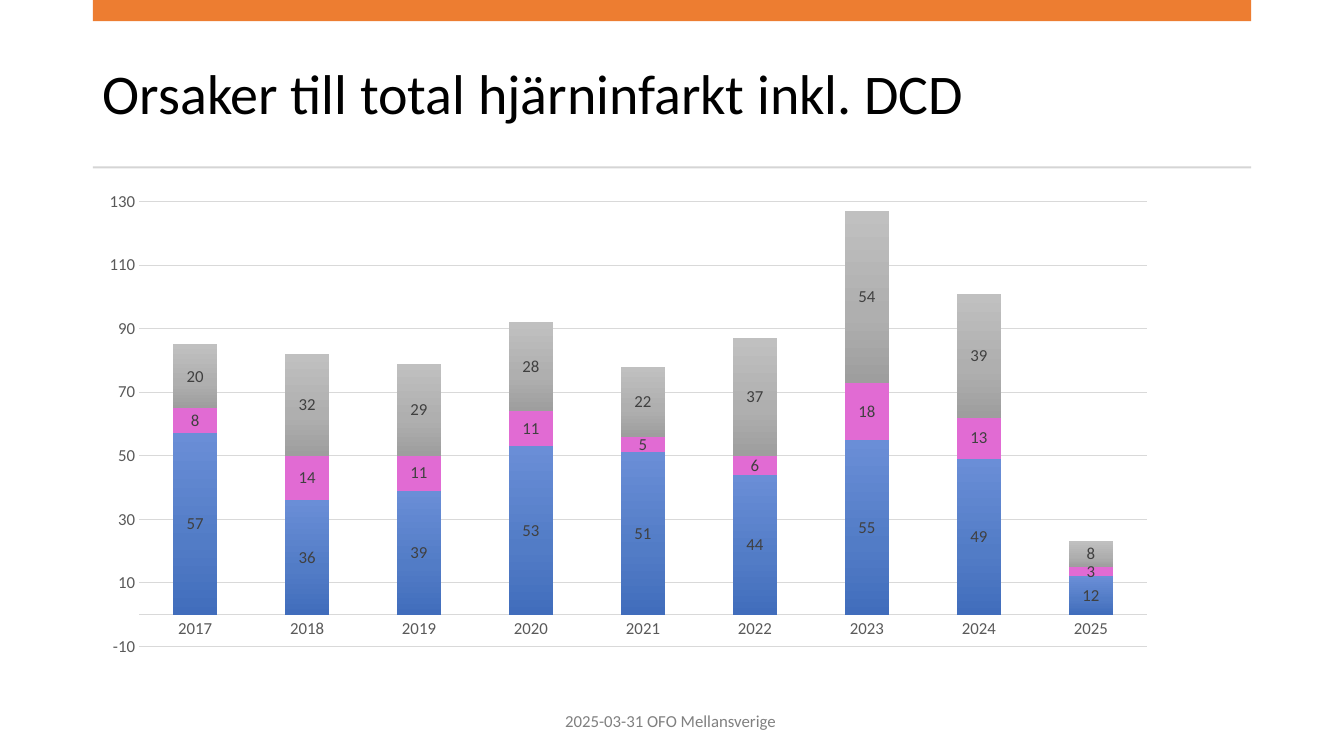
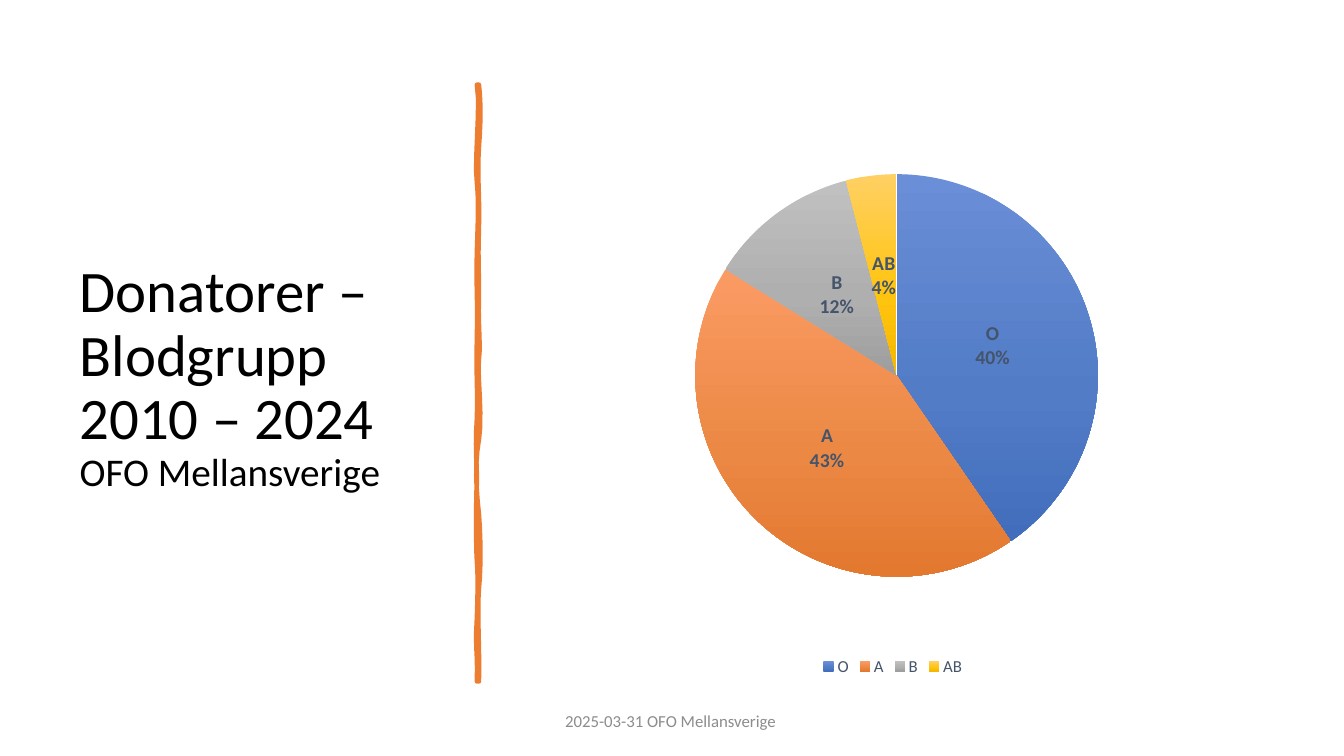
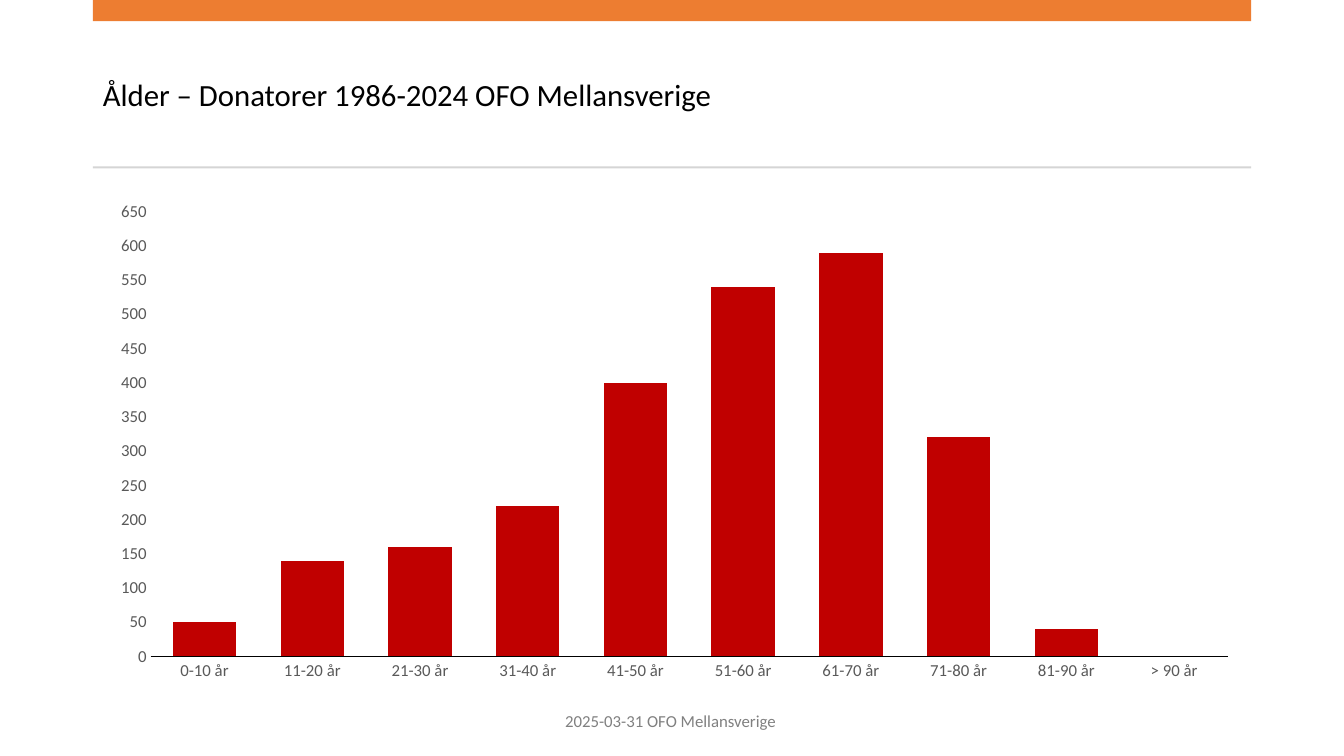
from copy import deepcopy
from dataclasses import dataclass

from lxml import etree
from pptx import Presentation
from pptx.chart.data import CategoryChartData
from pptx.dml.color import RGBColor
from pptx.enum.chart import XL_CHART_TYPE, XL_LABEL_POSITION, XL_LEGEND_POSITION, XL_TICK_MARK
from pptx.enum.shapes import MSO_SHAPE
from pptx.enum.text import MSO_ANCHOR, MSO_AUTO_SIZE, PP_ALIGN
from pptx.oxml.ns import qn
from pptx.util import Inches, Pt

RECTANGLE = MSO_SHAPE.RECTANGLE
STACKED = XL_CHART_TYPE.COLUMN_STACKED
CLUSTERED = XL_CHART_TYPE.COLUMN_CLUSTERED
PIE = XL_CHART_TYPE.PIE
LABEL_CENTER = XL_LABEL_POSITION.CENTER
LEGEND_BOTTOM = XL_LEGEND_POSITION.BOTTOM
NO_TICK = XL_TICK_MARK.NONE
MIDDLE = MSO_ANCHOR.MIDDLE
NO_AUTOSIZE = MSO_AUTO_SIZE.NONE
LEFT = PP_ALIGN.LEFT
CENTER = PP_ALIGN.CENTER

FONT = "Calibri"
BLACK = "000000"
ORANGE = "ED7D31"
RULE_GRAY = "D5D5D5"
GRID_GRAY = "D9D9D9"
AXIS_GRAY = "595959"
LABEL_GRAY = "404040"
FOOTER_GRAY = "808080"
FOOTER_LIGHT = "8C8C8C"
SLATE = "44546A"
PINK = "E16BD3"
RED = "C00000"
BLUE_FADE = ("6A8ED7", "527CC6", "416DBC")
ORANGE_FADE = ("FB9B64", "EB8844", "E3782F")
GRAY_FADE = ("C0C0C0", "AFAFAF", "9E9E9E")
YELLOW_FADE = ("FFD063", "FFC410", "F5B800")
FADE_POSITIONS = (0, 0.6, 1)

FOOTER_TEXT = "2025-03-31 OFO Mellansverige "

STROKE_TOP = 0.84
STROKE_RIGHT = (
    (4.77, 1.02, 4.77, 1.19, 1.46), (4.73, 1.73, 4.76, 1.95, 2.26),
    (4.74, 2.57, 4.75, 2.62, 2.94), (4.74, 3.25, 4.77, 3.42, 3.56),
    (4.73, 3.70, 4.79, 4.14, 4.36), (4.71, 4.57, 4.72, 4.84, 5.10),
    (4.77, 5.36, 4.77, 5.64, 5.84), (4.73, 6.03, 4.76, 6.50, 6.76),
)
STROKE_LEFT = (
    (4.74, 6.46, 4.71, 6.44, 6.13), (4.74, 5.83, 4.74, 5.70, 5.57),
    (4.72, 5.44, 4.72, 4.95, 4.77), (4.73, 4.59, 4.71, 4.45, 4.15),
    (4.74, 3.86, 4.72, 3.73, 3.35), (4.74, 2.98, 4.72, 2.81, 2.50),
    (4.74, 2.18, 4.75, 2.00, 1.81), (4.70, 1.63, 4.77, 1.04, 0.84),
)


@dataclass
class Box:
    left: float
    top: float
    width: float
    height: float

    def inner(self, top, height):
        return Box(self.left, self.top + top, self.width, height)

    def lengths(self):
        return [Inches(value) for value in (self.left, self.top, self.width, self.height)]


HEADER = Box(0.92, 0, 11.49, 1.67)
COLUMN_CHART = Box(0.92, 1.9, 11.49, 4.96)
SIDE_TITLE = Box(0.69, 0.7, 3.74, 6.11)
PIE_CHART = Box(5.08, 0.7, 7.55, 6.05)
FOOTER = Box(4.42, 6.95, 4.5, 0.4)


def color(value):
    return RGBColor.from_string(value)


def style_font(font, size, value, bold=False):
    font.name = FONT
    font.size = Pt(size)
    font.bold = bold
    font.color.rgb = color(value)


def style_line(line, value, width):
    line.color.rgb = color(value)
    line.width = Pt(width)


def paint(fill, value):
    if isinstance(value, str):
        fill.solid()
        fill.fore_color.rgb = color(value)
        return
    fill.gradient()
    fill.gradient_angle = 270
    first = fill.gradient_stops[0]._gs
    first.addnext(deepcopy(first))
    for stop, shade, position in zip(fill.gradient_stops, value, FADE_POSITIONS):
        stop.color.rgb = color(shade)
        stop.position = position


def add_bar(slide, box, value):
    bar = slide.shapes.add_shape(RECTANGLE, *box.lengths())
    bar.shadow.inherit = False
    paint(bar.fill, value)
    bar.line.fill.background()


def add_title(slide, box, text, sizes):
    title = slide.shapes.title
    title.left, title.top, title.width, title.height = box.lengths()
    frame = title.text_frame
    frame.auto_size = NO_AUTOSIZE
    frame.vertical_anchor = MIDDLE
    paragraph = frame.paragraphs[0]
    paragraph.text = text
    paragraph.alignment = LEFT
    paragraph.line_spacing = 0.9
    for run, size in zip(paragraph.runs, sizes):
        style_font(run.font, size, BLACK)


def add_header(slide, box, text, size):
    add_title(slide, box.inner(0.37, 1.18), text, [size])
    add_bar(slide, box.inner(0, 0.21), ORANGE)
    add_bar(slide, box.inner(1.65, 0.02), RULE_GRAY)


def add_footer(slide, box, value):
    frame = slide.shapes.add_textbox(*box.lengths()).text_frame
    frame.word_wrap = True
    frame.vertical_anchor = MIDDLE
    paragraph = frame.paragraphs[0]
    paragraph.text = FOOTER_TEXT
    paragraph.alignment = CENTER
    paragraph.space_after = Pt(6)
    style_font(paragraph.runs[0].font, 12, value)


def curve_points(edge, start_y, edge_x, steps=6):
    points = []
    for x1, y1, x2, y2, end_y in edge:
        for step in range(1, steps + 1):
            t = step / steps
            weights = ((1 - t) ** 3, 3 * t * (1 - t) ** 2, 3 * t * t * (1 - t), t ** 3)
            x = sum(w * v for w, v in zip(weights, (edge_x, x1, x2, edge_x)))
            y = sum(w * v for w, v in zip(weights, (start_y, y1, y2, end_y)))
            points.append((Inches(x), Inches(y)))
        start_y = end_y
    return points


def add_brush_stroke(slide):
    right_x, left_x = 4.75, 4.73
    bottom = STROKE_RIGHT[-1][-1]
    points = curve_points(STROKE_RIGHT, STROKE_TOP, right_x)
    points.append((Inches(left_x), Inches(bottom)))
    points += curve_points(STROKE_LEFT, bottom, left_x)
    builder = slide.shapes.build_freeform(Inches(right_x), Inches(STROKE_TOP))
    builder.add_line_segments(points, close=True)
    stroke = builder.convert_to_shape()
    stroke.shadow.inherit = False
    paint(stroke.fill, ORANGE)
    style_line(stroke.line, ORANGE, 3.25)
    etree.SubElement(stroke.line._get_or_add_ln(), qn("a:round"))


def set_plot_layout(chart, shares):
    plot_area = chart._chartSpace.chart.plotArea
    for layout in plot_area.findall(qn("c:layout")):
        plot_area.remove(layout)
    layout = etree.Element(qn("c:layout"))
    plot_area.insert(0, layout)
    manual = etree.SubElement(layout, qn("c:manualLayout"))
    settings = [("layoutTarget", "inner"), ("xMode", "edge"), ("yMode", "edge")]
    settings += zip("xywh", shares)
    for name, value in settings:
        etree.SubElement(manual, qn("c:" + name)).set("val", str(value))


def add_chart(slide, box, kind, categories, value_rows, shares):
    data = CategoryChartData()
    data.categories = categories
    for number, values in enumerate(value_rows, 1):
        data.add_series(f"Series {number}", values)
    chart = slide.shapes.add_chart(kind, *box.lengths(), data).chart
    chart.has_title = False
    chart.has_legend = False
    style_font(chart.font, 10, BLACK)
    set_plot_layout(chart, shares)
    return chart


def style_labels(labels, size, value, bold=False):
    labels.position = LABEL_CENTER
    style_font(labels.font, size, value, bold)


def style_columns(chart, fills, gap, overlap, scale, axis_line):
    plot = chart.plots[0]
    plot.vary_by_categories = False
    plot.gap_width = gap
    plot.overlap = overlap
    for series, value in zip(plot.series, fills):
        series.invert_if_negative = False
        paint(series.format.fill, value)
    for axis in (chart.category_axis, chart.value_axis):
        axis.major_tick_mark = NO_TICK
        axis.minor_tick_mark = NO_TICK
        axis.has_major_gridlines = False
        style_font(axis.tick_labels.font, 12, AXIS_GRAY)
    style_line(chart.category_axis.format.line, *axis_line)
    value_axis = chart.value_axis
    value_axis.format.line.fill.background()
    value_axis.minimum_scale, value_axis.maximum_scale, value_axis.major_unit = scale


def build_causes(slide):
    add_header(slide, HEADER, "Orsaker till total hjärninfarkt inkl. DCD", 40)
    add_footer(slide, FOOTER, FOOTER_GRAY)
    counts = (
        (57, 36, 39, 53, 51, 44, 55, 49, 12),
        (8, 14, 11, 11, 5, 6, 18, 13, 3),
        (20, 32, 29, 28, 22, 37, 54, 39, 8),
    )
    years = [str(year) for year in range(2017, 2026)]
    chart = add_chart(slide, COLUMN_CHART, STACKED, years, counts, (0.04, 0.02, 0.87, 0.89))
    style_columns(chart, (BLUE_FADE, PINK, GRAY_FADE), 150, 100, (-10, 130, 20), (GRID_GRAY, 0.75))
    chart.value_axis.has_major_gridlines = True
    style_line(chart.value_axis.major_gridlines.format.line, GRID_GRAY, 0.75)
    for series in chart.plots[0].series:
        series.data_labels.show_value = True
        style_labels(series.data_labels, 12, LABEL_GRAY)


def build_blood_groups(slide):
    title = "Donatorer – Blodgrupp\v2010 – 2024\vOFO Mellansverige"
    add_title(slide, SIDE_TITLE, title, (42, 42, 28))
    add_brush_stroke(slide)
    add_footer(slide, FOOTER, FOOTER_LIGHT)
    chart = add_chart(slide, PIE_CHART, PIE, ("O", "A", "B", "AB"), [(40, 43, 12, 4)],
                      (0.08, 0.17, 0.85, 0.66))
    chart.plots[0].vary_by_categories = True
    chart.has_legend = True
    chart.legend.position = LEGEND_BOTTOM
    chart.legend.include_in_layout = False
    style_font(chart.legend.font, 12, SLATE)
    series = chart.plots[0].series[0]
    for index, fade in enumerate((BLUE_FADE, ORANGE_FADE, GRAY_FADE, YELLOW_FADE)):
        paint(series.points[index].format.fill, fade)
    labels = series.data_labels
    labels.show_value = False
    labels.show_category_name = True
    labels.show_percentage = True
    labels.number_format = "0%"
    labels.number_format_is_linked = False
    style_labels(labels, 14, SLATE, True)
    separator = etree.Element(qn("c:separator"))
    separator.text = "\n"
    labels._element.find(qn("c:showBubbleSize")).addnext(separator)


def build_ages(slide):
    add_header(slide, HEADER, "Ålder – Donatorer 1986-2024 OFO Mellansverige", 22)
    add_footer(slide, FOOTER, FOOTER_GRAY)
    decades = [f"{start + 1 if start else 0}-{start + 10} år" for start in range(0, 90, 10)]
    donors = (50, 140, 160, 220, 400, 540, 590, 320, 40, None)
    chart = add_chart(slide, COLUMN_CHART, CLUSTERED, decades + ["> 90 år"], [donors],
                      (0.05, 0.04, 0.93, 0.89))
    style_columns(chart, [RED], 70, -27, (0, 650, 50), (BLACK, 0.75))


def main():
    presentation = Presentation()
    presentation.slide_width = Inches(13.33)
    presentation.slide_height = Inches(7.5)
    title_only = presentation.slide_layouts[5]
    for build in (build_causes, build_blood_groups, build_ages):
        build(presentation.slides.add_slide(title_only))
    presentation.save("out.pptx")


if __name__ == "__main__":
    main()
